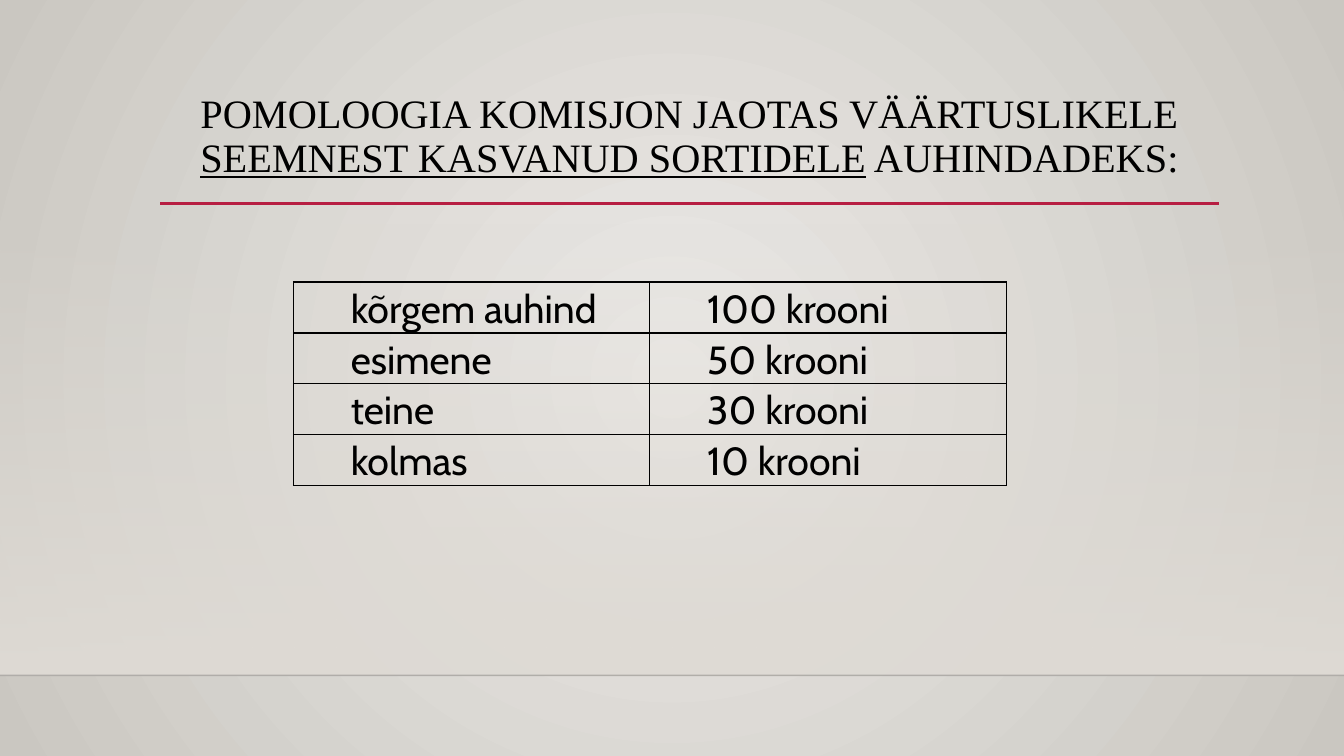
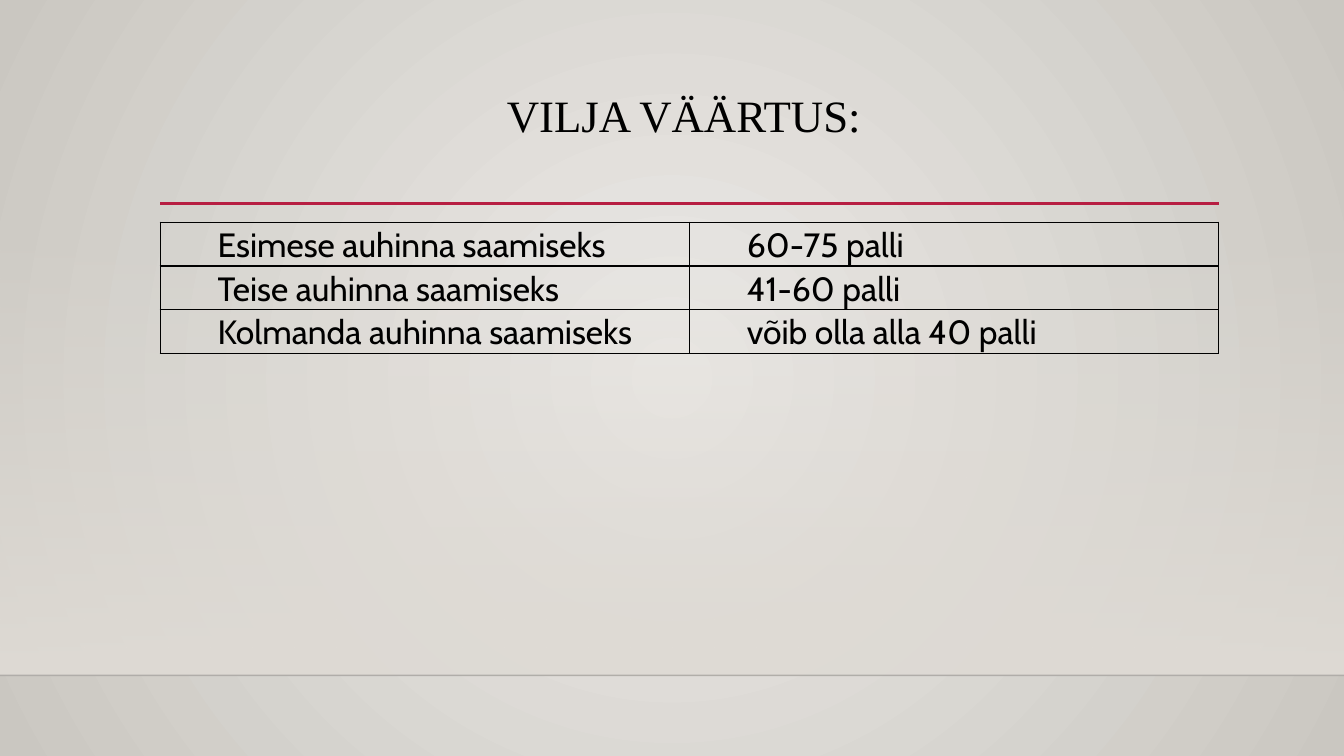
from dataclasses import dataclass

from lxml.etree import SubElement
from pptx import Presentation
from pptx.dml.color import RGBColor
from pptx.enum.shapes import MSO_CONNECTOR, MSO_SHAPE
from pptx.enum.text import MSO_ANCHOR, MSO_AUTO_SIZE, PP_ALIGN
from pptx.oxml.ns import qn
from pptx.util import Pt


@dataclass(frozen=True)
class Theme:
    ink: str = "000000"
    accent: str = "B71E42"
    floor: str = "000001"
    glow: str = "ECEAE7"
    edge: str = "CAC7C1"
    wall: str = "DFDBD5"
    title_font: str = "Times New Roman"
    body_font: str = "Cabin"
    title_size: float = 32
    long_title_size: float = 28.8
    table_size: float = 28
    small_table_size: float = 24


T = Theme()
WIDTH, HEIGHT = 960, 540
FLOOR_Y = 482.4
TITLE_BOX = (114.5, 63.4, 756, 82.8)


def rgb(color):
    return RGBColor.from_string(color)


def add_text(p, text, font=T.body_font, size=T.table_size, color=T.ink, underline=None):
    r = p.add_run()
    r.text = text
    r.font.name, r.font.size = font, Pt(size)
    r.font.color.rgb = rgb(color)
    r.font.underline = underline


def set_alpha(parent, percent):
    SubElement(next(parent.iter(qn("a:srgbClr"))), qn("a:alpha"), val=str(percent * 1000))


def set_gradient(fill, colors):
    fill.gradient()
    for stop, color in zip(fill.gradient_stops, colors):
        stop.color.rgb = rgb(color)


def add_rule(shapes, x, y, w, color, weight):
    line = shapes.add_connector(MSO_CONNECTOR.STRAIGHT, Pt(x), Pt(y), Pt(x + w), Pt(y))
    line.line.color.rgb = rgb(color)
    line.line.width = Pt(weight)
    SubElement(line.element.spPr, qn("a:effectLst"))
    return line


def dress_background(layout):
    set_gradient(layout.background.fill, (T.glow, T.edge))
    grad = next(layout.element.iter(qn("a:gradFill")))
    grad.remove(grad.find(qn("a:lin")))
    circle = SubElement(grad, qn("a:path"), path="circle")
    SubElement(circle, qn("a:fillToRect"), **dict.fromkeys("ltrb", "50000"))


def dress_layout(layout, shapes):
    dress_background(layout)
    top = 159.1
    wall = shapes.add_shape(MSO_SHAPE.RECTANGLE, 0, Pt(top), Pt(WIDTH), Pt(FLOOR_Y - top))
    wall.shadow.inherit = False
    wall.line.fill.background()
    set_gradient(wall.fill, (T.wall, T.wall))
    wall.fill.gradient_angle = 270
    set_alpha(wall.element.spPr, 0)

    floor = add_rule(shapes, 0, FLOOR_Y, WIDTH, T.floor, 1)
    set_alpha(floor.element.spPr, 20)
    x, _, w, _ = TITLE_BOX
    accent = add_rule(shapes, x, 145.4, w, T.accent, 2.5)
    for i, part in enumerate((wall, floor, accent), 2):
        layout.shapes.element.insert(i, part.element)


def add_title(s, box, runs, size):
    title = s.shapes.title
    title.left, title.top, title.width, title.height = map(Pt, box)
    tf = title.text_frame
    tf.word_wrap, tf.auto_size = True, MSO_AUTO_SIZE.NONE
    tf.vertical_anchor = MSO_ANCHOR.TOP
    p = tf.paragraphs[0]
    p.alignment, p.line_spacing = PP_ALIGN.CENTER, 0.9
    for text, underline in runs:
        add_text(p, text, font=T.title_font, size=size, underline=underline)


def add_borders(cell):
    tcPr = cell._tc.get_or_add_tcPr()
    for i, side in enumerate(("lnL", "lnR", "lnT", "lnB")):
        ln = tcPr.makeelement(qn(f"a:{side}"), w=str(Pt(1)))
        fill = SubElement(ln, qn("a:solidFill"))
        SubElement(fill, qn("a:srgbClr"), val=T.ink)
        tcPr.insert(i, ln)


def fill_cell(cell, text, size, space_after):
    cell.fill.background()
    add_borders(cell)
    cell.margin_left = cell.margin_right = Pt(5)
    cell.margin_top = cell.margin_bottom = 0
    p = cell.text_frame.paragraphs[0]
    pPr = p._p.get_or_add_pPr()
    pPr.set("marL", str(Pt(36)))
    pPr.set("indent", "0")
    p.alignment, p.line_spacing = PP_ALIGN.JUSTIFY, 1.07
    p.space_after = Pt(space_after)
    add_text(p, text, size=size)


def add_prize_table(s, box, rows, size):
    x, y, w, h = map(Pt, box)
    table = s.shapes.add_table(len(rows), len(rows[0]), x, y, w, h).table
    table.first_row = table.horz_banding = False
    for i, row in enumerate(rows):
        for j, text in enumerate(row):
            fill_cell(table.cell(i, j), text, size, space_after=8 * j)


def main():
    prs = Presentation()
    prs.slide_width, prs.slide_height = Pt(WIDTH), Pt(HEIGHT)
    layout = prs.slide_layouts[5]

    s = prs.slides.add_slide(layout)
    dress_layout(layout, s.shapes)
    add_title(s, TITLE_BOX, [
        ("POMOLOOGIA KOMISJON JAOTAS VÄÄRTUSLIKELE ", None),
        ("SEEMNEST KASVANUD SORTIDELE", True),
        (" AUHINDADEKS:", None),
    ], T.long_title_size)
    add_prize_table(s, (209.6, 201.4, 509.2, 145.6), [
        ("kõrgem auhind", "100 krooni"),
        ("esimene", "50 krooni"),
        ("teine", "30 krooni"),
        ("kolmas", "10 krooni"),
    ], T.table_size)

    s = prs.slides.add_slide(layout)
    add_title(s, TITLE_BOX, [("VILJA VÄÄRTUS: ", None)], T.title_size)
    add_prize_table(s, (114.5, 158.7, 756, 93.6), [
        ("Esimese auhinna saamiseks", "60-75 palli"),
        ("Teise auhinna saamiseks", "41-60 palli"),
        ("Kolmanda auhinna saamiseks", "võib olla alla 40 palli"),
    ], T.small_table_size)

    prs.save("out.pptx")


if __name__ == "__main__":
    main()
